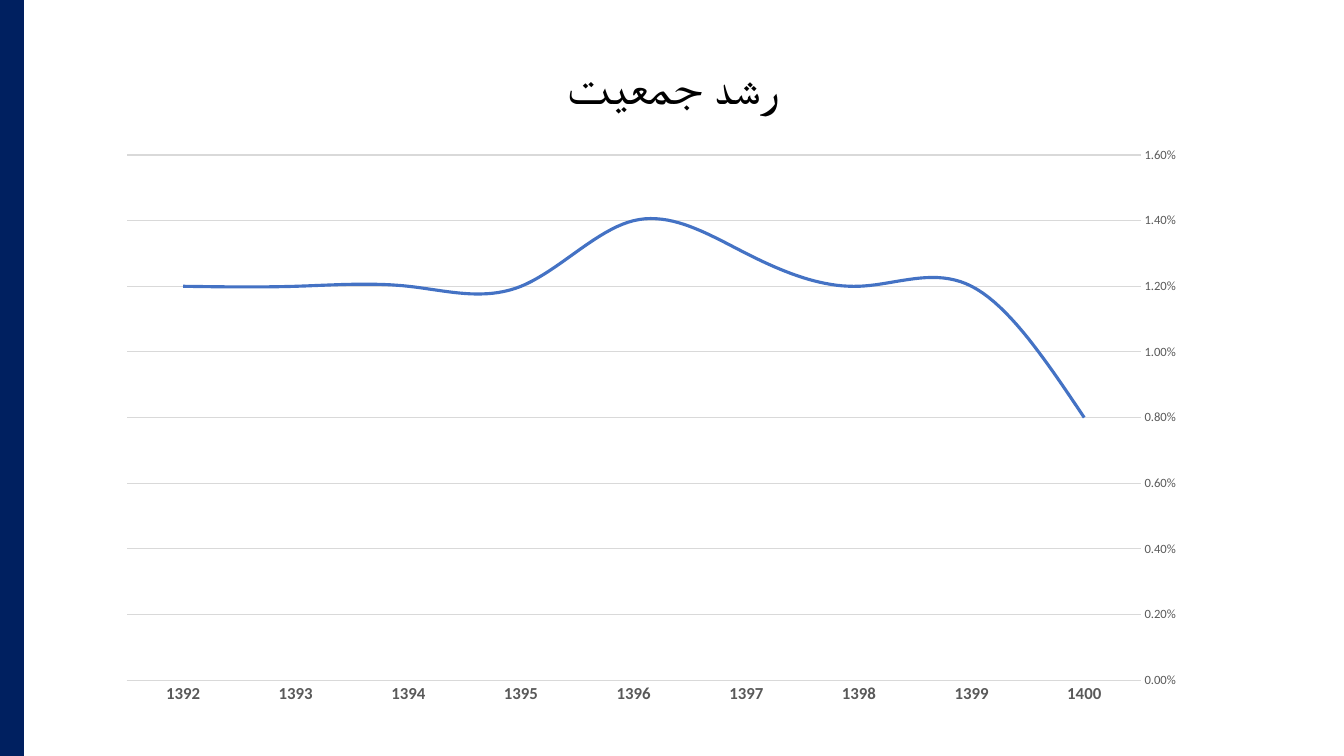
from pptx import Presentation
from pptx.chart.data import CategoryChartData
from pptx.dml.color import RGBColor
from pptx.enum.chart import XL_CHART_TYPE, XL_TICK_MARK
from pptx.enum.shapes import MSO_SHAPE
from pptx.enum.text import MSO_ANCHOR, PP_ALIGN
from pptx.util import Inches, Pt

LINE_CHART = XL_CHART_TYPE.LINE
NO_TICK = XL_TICK_MARK.NONE
RECTANGLE = MSO_SHAPE.RECTANGLE
MIDDLE = MSO_ANCHOR.MIDDLE
CENTER = PP_ALIGN.CENTER

FONT_NAME = "Calibri"
NAVY, BLUE, GREY, PALE, BLACK = "002060", "4472C4", "595959", "D9D9D9", "000000"
YEARS = [str(year) for year in range(1400, 1391, -1)]
GROWTH = [0.008, 0.012, 0.012, 0.013, 0.014, 0.012, 0.012, 0.012, 0.012]


def color(hex_value):
    return RGBColor.from_string(hex_value)


def apply_format(target, values):
    for name, value in values.items():
        setattr(target, name, value)


def format_font(font, size, hex_value, bold=False):
    apply_format(font, {"name": FONT_NAME, "size": Pt(size), "bold": bold})
    font.color.rgb = color(hex_value)


def format_line(line, hex_value, width):
    line.color.rgb = color(hex_value)
    line.width = Pt(width)


def place(left, top, width, height):
    return {"left": Inches(left), "top": Inches(top),
            "width": Inches(width), "height": Inches(height)}


def add_side_band(page):
    band = page.shapes.add_shape(RECTANGLE, **place(0, 0, 0.23, 7.5))
    band.shadow.inherit = False
    band.fill.solid()
    band.fill.fore_color.rgb = color(NAVY)
    format_line(band.line, NAVY, 1)


def set_title(page, text):
    title = page.shapes.title
    apply_format(title, place(0.92, 0.4, 11.5, 0.95))
    frame = title.text_frame
    apply_format(frame, {"text": text, "vertical_anchor": MIDDLE, "word_wrap": True})
    para = frame.paragraphs[0]
    apply_format(para, {"alignment": CENTER, "line_spacing": 0.9})
    para._p.get_or_add_pPr().set("rtl", "1")
    format_font(para.runs[0].font, 36, BLACK)


def format_axis(axis, size, bold, values):
    apply_format(axis, {"major_tick_mark": NO_TICK, "minor_tick_mark": NO_TICK, **values})
    format_font(axis.tick_labels.font, size, GREY, bold)


def add_growth_chart(page):
    data = CategoryChartData(number_format="0.00%")
    data.categories = YEARS
    data.add_series("Series 1", GROWTH)
    box = place(1.04, 1.35, 10.84, 5.75)
    chart = page.shapes.add_chart(
        LINE_CHART, box["left"], box["top"], box["width"], box["height"], data).chart
    apply_format(chart, {"has_legend": False, "has_title": False})
    format_font(chart.font, 10, BLACK)

    years = chart.category_axis
    format_axis(years, 12, True, {"reverse_order": True, "has_major_gridlines": False})
    format_line(years.format.line, PALE, 0.75)

    rates = chart.value_axis
    format_axis(rates, 9, False, {"has_major_gridlines": True, "minimum_scale": 0,
                                  "maximum_scale": 0.016, "major_unit": 0.002})
    rates.format.line.fill.background()
    format_line(rates.major_gridlines.format.line, PALE, 0.75)
    apply_format(rates.tick_labels, {"number_format": "0.00%",
                                     "number_format_is_linked": False})

    plot = chart.plots[0]
    plot.vary_by_categories = False
    series = plot.series[0]
    series.smooth = True
    format_line(series.format.line, BLUE, 2.25)


def main():
    deck = Presentation()
    apply_format(deck, {"slide_width": Inches(13.33), "slide_height": Inches(7.5)})
    page = deck.slides.add_slide(deck.slide_layouts[5])
    add_side_band(page)
    set_title(page, "رشد جمعیت")
    add_growth_chart(page)
    deck.save("out.pptx")


if __name__ == "__main__":
    main()
